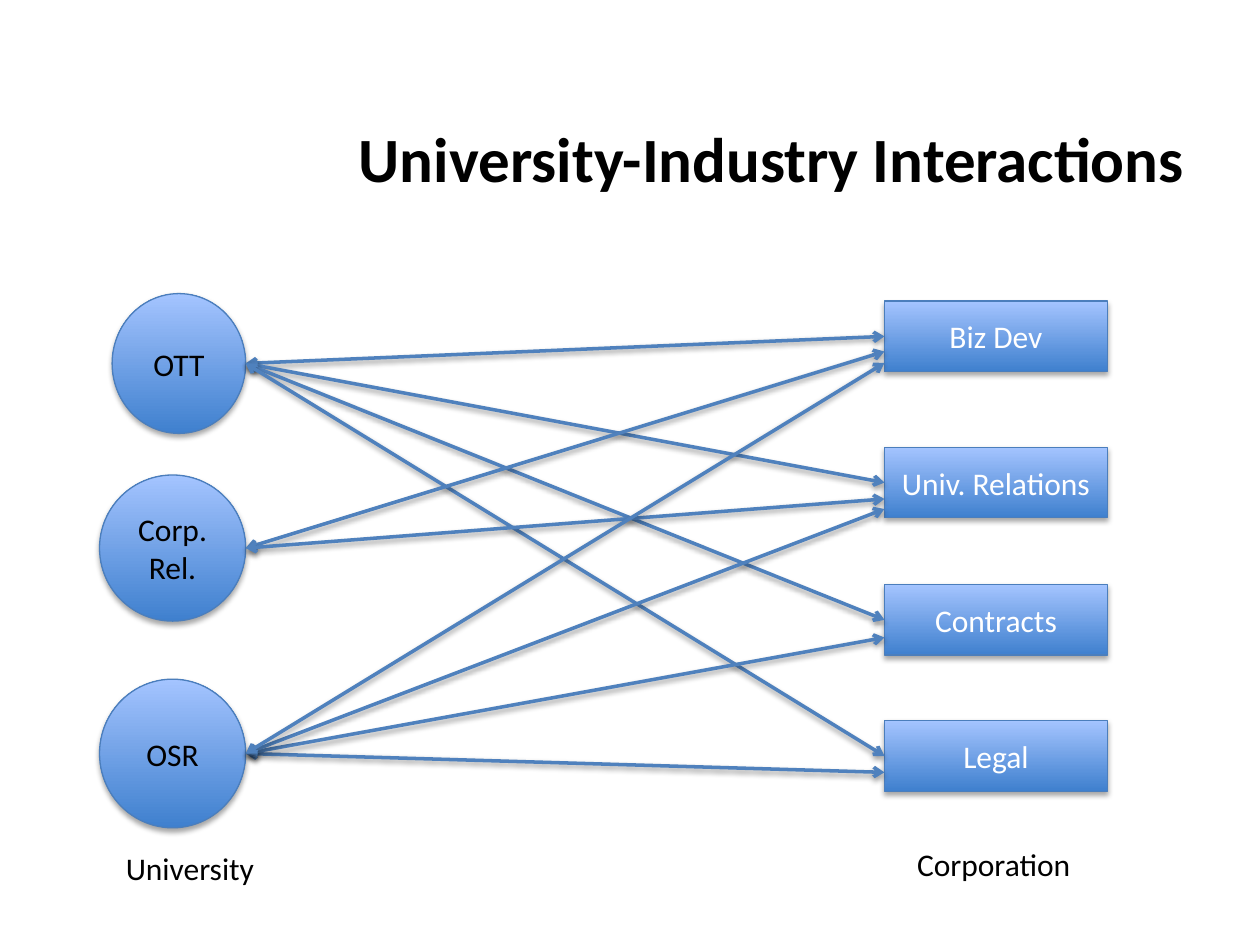
from lxml.etree import SubElement
from pptx import Presentation
from pptx.dml.color import RGBColor
from pptx.enum.shapes import MSO_CONNECTOR as Connector, MSO_SHAPE as Shape
from pptx.enum.text import MSO_ANCHOR as Anchor, MSO_AUTO_SIZE as AutoSize, PP_ALIGN as Align
from pptx.oxml.ns import qn
from pptx.util import Inches, Pt

COLORS = {
    "text": "000000",
    "light_text": "FFFFFF",
    "fill_bottom": "3F80CE",
    "fill_top": "A4C4FF",
    "outline": "4B7EBC",
    "arrow": "4F81BD",
    "shadow": "000000",
}


def rgb(name):
    return RGBColor.from_string(COLORS[name])


class Diagram:
    font = "Calibri"
    body_size = 18

    def __init__(self, page):
        self.page = page

    def add_text(self, frame, text, color="text", size=body_size, bold=False, align=Align.LEFT):
        para = frame.paragraphs[0]
        para.alignment = align
        span = para.add_run()
        span.text = text
        span.font.name = self.font
        span.font.size = Pt(size)
        span.font.bold = bold
        span.font.color.rgb = rgb(color)

    def cast_shadow(self, effects, distance, opacity):
        shadow = SubElement(effects, qn("a:outerShdw"), blurRad=str(Pt(3.1)),
                            dist=str(Pt(distance)), dir="5400000", rotWithShape="0")
        color = SubElement(shadow, qn("a:srgbClr"), val=COLORS["shadow"])
        SubElement(color, qn("a:alpha"), val=str(opacity * 1000))

    def title(self, text, left, top, width, height):
        box = self.page.shapes.add_textbox(Inches(left), Inches(top), Inches(width), Inches(height))
        box.text_frame.word_wrap = True
        box.text_frame.vertical_anchor = Anchor.MIDDLE
        self.add_text(box.text_frame, text, size=36, bold=True)

    def label(self, text, left, top, width):
        box = self.page.shapes.add_textbox(Inches(left), Inches(top), Inches(width), Inches(0.4))
        box.text_frame.word_wrap = False
        box.text_frame.auto_size = AutoSize.SHAPE_TO_FIT_TEXT
        self.add_text(box.text_frame, text)

    def node(self, kind, text, left, top, width, height, color):
        node = self.page.shapes.add_shape(
            kind, Inches(left), Inches(top), Inches(width), Inches(height))
        node.fill.gradient()
        node.fill.gradient_angle = 90
        for stop, name in zip(node.fill.gradient_stops, ("fill_bottom", "fill_top")):
            stop.color.rgb = rgb(name)
        node.line.color.rgb = rgb("outline")
        node.line.width = Pt(0.75)
        node.shadow.inherit = False
        self.cast_shadow(node.element.spPr.find(qn("a:effectLst")), 1.8, 35)
        node.text_frame.word_wrap = True
        node.text_frame.vertical_anchor = Anchor.MIDDLE
        self.add_text(node.text_frame, text, color, align=Align.CENTER)
        return node

    def arrow(self, circle, box, drop):
        start_y = circle.top + circle.height // 2
        end_y = box.top + box.height // 2 + Inches(drop)
        arrow = self.page.shapes.add_connector(
            Connector.STRAIGHT, circle.left + circle.width, start_y, box.left, end_y)
        if drop == 0:
            arrow.end_connect(box, 1)
        arrow.line.color.rgb = rgb("arrow")
        arrow.line.width = Pt(2)
        properties = arrow.element.spPr
        line = properties.find(qn("a:ln"))
        for end in ("a:headEnd", "a:tailEnd"):
            SubElement(line, qn(end), type="arrow")
        self.cast_shadow(SubElement(properties, qn("a:effectLst")), 1.6, 38)


def main():
    deck = Presentation()
    deck.slide_width, deck.slide_height = Inches(10), Inches(7.5)
    diagram = Diagram(deck.slides.add_slide(deck.slide_layouts[6]))

    diagram.title("University-Industry Interactions", 2.75, 0.89, 7.25, 0.71)

    offices = {
        text: diagram.node(Shape.OVAL, text, 1.95 - width, top, width, height, "text")
        for text, top, width, height in (
            ("OTT", 2.33, 1.06, 1.11),
            ("Corp. Rel.", 3.77, 1.16, 1.16),
            ("OSR", 5.39, 1.16, 1.18),
        )
    }
    departments = {
        text: diagram.node(Shape.RECTANGLE, text, 7.02, top, 1.77, 0.56, "light_text")
        for text, top in (
            ("Biz Dev", 2.39),
            ("Univ. Relations", 3.55),
            ("Contracts", 4.64),
            ("Legal", 5.72),
        )
    }
    diagram.label("University", 0.9, 6.69, 1.24)
    diagram.label("Corporation", 7.18, 6.66, 1.44)

    links = {
        "OTT": {"Biz Dev": 0, "Univ. Relations": 0, "Contracts": 0, "Legal": 0},
        "Corp. Rel.": {"Biz Dev": 0.12, "Univ. Relations": 0.13},
        "OSR": {"Legal": 0.13, "Contracts": 0.14, "Univ. Relations": 0.21, "Biz Dev": 0.21},
    }
    for office, drops in links.items():
        for department, drop in drops.items():
            diagram.arrow(offices[office], departments[department], drop)

    deck.save("out.pptx")


if __name__ == "__main__":
    main()
